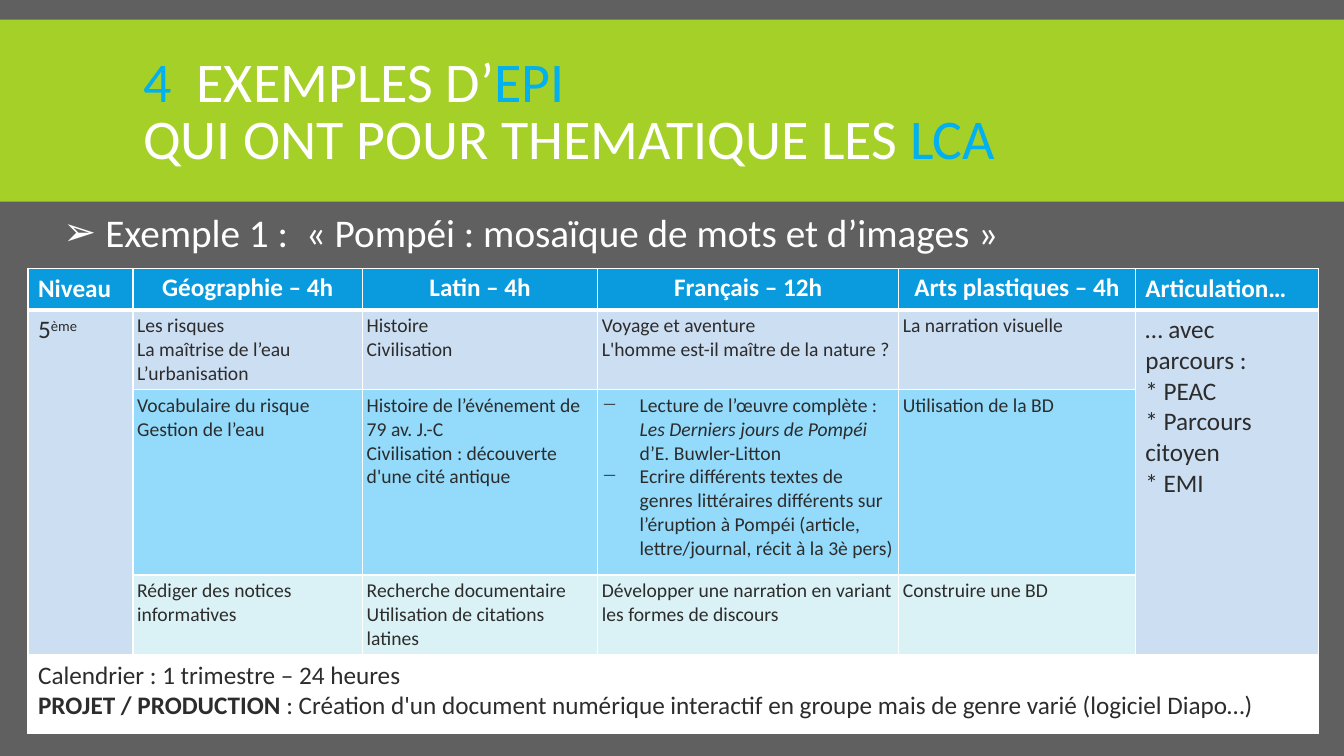
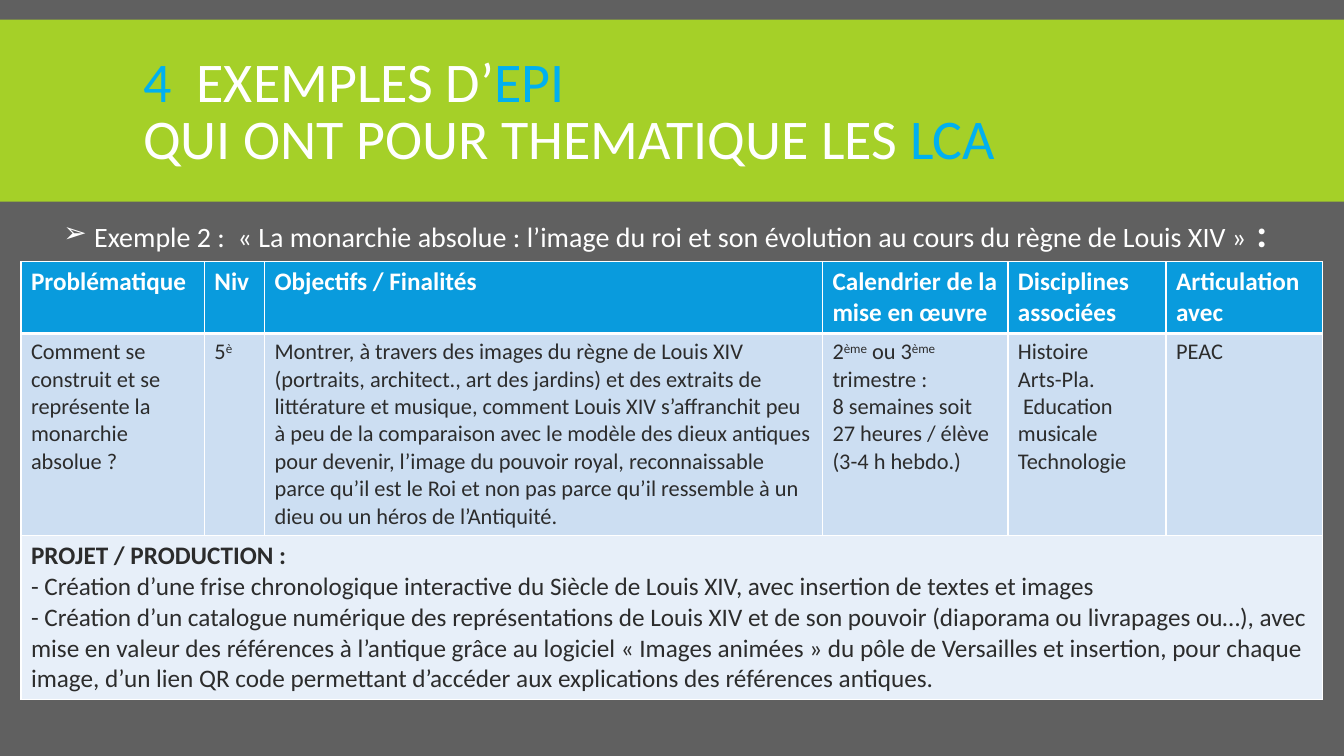
from dataclasses import dataclass
from itertools import product

from lxml import etree
from pptx import Presentation
from pptx.dml.color import RGBColor
from pptx.enum.shapes import MSO_SHAPE
from pptx.enum.text import MSO_ANCHOR, MSO_AUTO_SIZE, PP_ALIGN
from pptx.oxml.ns import qn
from pptx.util import Pt

RECTANGLE = MSO_SHAPE.RECTANGLE
LEFT, CENTER = PP_ALIGN.LEFT, PP_ALIGN.CENTER
MIDDLE = MSO_ANCHOR.MIDDLE
NO_AUTOFIT = MSO_AUTO_SIZE.NONE

GREY = RGBColor(0x60, 0x60, 0x60)
GREEN = RGBColor(0xA5, 0xD0, 0x28)
ACCENT = RGBColor(0x00, 0xB0, 0xF0)
WHITE = RGBColor(0xFF, 0xFF, 0xFF)
INK = RGBColor(0x2C, 0x2C, 0x2C)
HEADER_BLUE = RGBColor(0x09, 0x9B, 0xDD)
PALE_BLUE = RGBColor(0xCC, 0xDE, 0xF2)
SKY_BLUE = RGBColor(0x93, 0xDA, 0xFB)
PALE_AQUA = RGBColor(0xDA, 0xF2, 0xF5)
ICE_BLUE = RGBColor(0xE7, 0xEF, 0xF9)

FONT = "Calibri"
SLIDE_WIDTH, SLIDE_HEIGHT = 960, 540
LAYOUT_TITLE_AND_CONTENT = 1
BAND_ID = 20


@dataclass(frozen=True)
class Run:
    text: str
    bold: bool | None = None
    italic: bool | None = None
    superscript: bool = False
    color: RGBColor | None = None
    size: float | None = None


Line = tuple[str | Run, ...]


@dataclass(frozen=True)
class Cell:
    lines: tuple[Line, ...]
    fill: RGBColor
    size: float
    color: RGBColor = INK
    bold: bool = False
    align: PP_ALIGN = LEFT
    inset: float | None = None
    bullet: str | None = None
    row_span: int = 1
    col_span: int = 1


@dataclass(frozen=True)
class Grid:
    left: float
    top: float
    columns: tuple[float, ...]
    rows: tuple[float, ...]
    cells: tuple[tuple[Cell | None, ...], ...]


@dataclass(frozen=True)
class Example:
    heading: Line
    heading_size: float
    heading_indent: float
    grid: Grid


def as_lines(text: str) -> tuple[Line, ...]:
    return tuple((line,) for line in text.split("\n"))


def header(text: str) -> Cell:
    return Cell(as_lines(text), HEADER_BLUE, 18, WHITE, bold=True)


def subject_header(text: str) -> Cell:
    return Cell(as_lines(text), HEADER_BLUE, 18, WHITE, bold=True, align=CENTER, inset=3)


def subject_row(fill: RGBColor, *texts: str) -> tuple[Cell, ...]:
    return tuple(Cell(as_lines(text), fill, 14, inset=3) for text in texts)


def detail(text: str) -> Cell:
    return Cell(as_lines(text), PALE_BLUE, 16)


def sup(text: str) -> Run:
    return Run(text, superscript=True)


TITLE_LINES: tuple[Line, ...] = (
    (Run("4", color=ACCENT), "  EXEMPLES D’", Run("EPI", color=ACCENT)),
    ("QUI ONT POUR THEMATIQUE LES ", Run("LCA", color=ACCENT)),
)

READING_AND_WRITING = Cell(
    (
        ("Lecture de l’œuvre complète\u00a0: ",
         Run("Les Derniers jours de Pompéi ", italic=True),
         "d’E. Buwler-Litton"),
        ("Ecrire différents textes de genres littéraires différents sur l’éruption "
         "à Pompéi (article, lettre/journal, récit à la 3è pers)",),
    ),
    SKY_BLUE, 14, inset=3, bullet="−",
)

vocabulary, history, comics = subject_row(
    SKY_BLUE,
    "Vocabulaire du risque\nGestion de l’eau",
    "Histoire de l’événement de 79 av. J.-C\n"
    "Civilisation\u00a0: découverte d'une cité antique",
    "Utilisation de la BD",
)

POMPEII = Example(
    ("Exemple 1 :  « Pompéi : mosaïque de mots et d’images\u00a0»",), 28, 30,
    Grid(
        20, 192, (75, 164, 168, 215, 169, 131), (29, 56, 132.5, 56.5, 56),
        (
            (header("Niveau"),
             *map(subject_header, ("Géographie – 4h", "Latin – 4h", "Français – 12h",
                                   "Arts plastiques – 4h")),
             header("Articulation…")),
            (Cell((("5", sup("ème")),), PALE_BLUE, 18, row_span=3),
             *subject_row(
                 PALE_BLUE,
                 "Les risques\nLa maîtrise de l’eau\nL’urbanisation",
                 "Histoire\nCivilisation",
                 "Voyage et aventure\nL'homme est-il maître de la nature\u00a0?",
                 "La narration visuelle"),
             Cell(as_lines("… avec parcours :\n* PEAC\n* Parcours citoyen\n* EMI"),
                  PALE_BLUE, 18, row_span=3)),
            (None, vocabulary, history, READING_AND_WRITING, comics, None),
            (None,
             *subject_row(
                 PALE_AQUA,
                 "Rédiger des notices informatives",
                 "Recherche documentaire\nUtilisation de citations latines",
                 "Développer une narration en variant les formes de discours",
                 "Construire une BD"),
             None),
            (Cell((
                ("Calendrier : 1 trimestre – 24 heures",),
                (Run("PROJET / PRODUCTION ", bold=True),
                 ": Création d'un document numérique interactif en groupe mais de "
                 "genre varié (logiciel Diapo…)"),
            ), WHITE, 18, col_span=6),),
        ),
    ),
)

MONARCHY = Example(
    ("Exemple 2 :  «\u00a0La monarchie absolue : l’image du roi et son évolution au "
     "cours du règne de Louis XIV\u00a0»", Run(" :", bold=True, size=28)), 20, 22,
    Grid(
        15, 187, (131, 43, 398.5, 132.5, 113, 112), (51, 144.5, 116.5),
        (
            tuple(map(header, ("Problématique", "Niv", "Objectifs / Finalités",
                               "Calendrier de la mise en œuvre",
                               "Disciplines associées", "Articulation avec"))),
            (detail("Comment se construit et se représente la monarchie absolue ?"),
             Cell((("5", sup("è")),), PALE_BLUE, 16),
             detail("Montrer, à travers des images du règne de Louis XIV (portraits, "
                    "architect., art des jardins) et des extraits de littérature et "
                    "musique, comment Louis XIV s’affranchit peu à peu de la comparaison "
                    "avec le modèle des dieux antiques pour devenir, l’image du pouvoir "
                    "royal, reconnaissable parce qu’il est le Roi et non pas parce qu’il "
                    "ressemble à un dieu ou un héros de l’Antiquité."),
             Cell((
                 ("2", sup("ème"), " ou 3", sup("ème"), " trimestre :"),
                 ("8 semaines soit 27 heures / élève (3-4 h hebdo.)",),
             ), PALE_BLUE, 16),
             detail("Histoire\nArts-Pla.\n Education musicale\nTechnologie"),
             detail("PEAC")),
            (Cell((
                (Run("PROJET / PRODUCTION :", bold=True),),
                ("- Création d’une frise chronologique interactive du Siècle de "
                 "Louis XIV, avec insertion de textes et images",),
                ("- Création d’un catalogue numérique des représentations de Louis XIV "
                 "et de son pouvoir (diaporama ou livrapages ou…), avec mise en valeur "
                 "des références à l’antique grâce au logiciel « Images animées » du "
                 "pôle de Versailles et insertion, pour chaque image, d’un lien QR code "
                 "permettant d’accéder aux explications des références antiques.",),
            ), ICE_BLUE, 18, col_span=6),),
        ),
    ),
)


def set_font(font, size: float, color: RGBColor, bold: bool = False) -> None:
    font.name, font.size, font.bold = FONT, Pt(size), bold
    font.color.rgb = color


def add_runs(paragraph, line: Line) -> None:
    for part in line:
        part = Run(part) if isinstance(part, str) else part
        run = paragraph.add_run()
        run.text = part.text
        if part.bold is not None:
            run.font.bold = part.bold
        if part.italic is not None:
            run.font.italic = part.italic
        if part.size is not None:
            run.font.size = Pt(part.size)
        if part.color is not None:
            run.font.color.rgb = part.color
        if part.superscript:
            run._r.get_or_add_rPr().set("baseline", "30000")


def set_bullet(paragraph, symbol: str, indent: float, color: RGBColor) -> None:
    properties = paragraph._p.get_or_add_pPr()
    properties.set("marL", str(Pt(indent)))
    properties.set("indent", str(-Pt(indent)))
    bullet = etree.Element(qn("a:buChar"), char=symbol)
    bullet_color = etree.Element(qn("a:buClr"))
    etree.SubElement(bullet_color, qn("a:srgbClr"), val=str(color))
    default_font = properties.find(qn("a:defRPr"))
    for element in (bullet_color, bullet):
        if default_font is None:
            properties.append(element)
        else:
            default_font.addprevious(element)


def set_borders(cell, top: float, bottom: float) -> None:
    """Draw white edges; line elements must come before the cell fill."""
    properties = cell._tc.get_or_add_tcPr()
    edges = (("a:lnL", 1), ("a:lnR", 1), ("a:lnT", top), ("a:lnB", bottom))
    for position, (tag, width) in enumerate(edges):
        edge = etree.Element(qn(tag), w=str(Pt(width)))
        fill = etree.SubElement(edge, qn("a:solidFill"))
        etree.SubElement(fill, qn("a:srgbClr"), val=str(WHITE))
        properties.insert(position, edge)


def fill_cell(cell, content: Cell) -> None:
    if content.inset is not None:
        cell.margin_left = cell.margin_right = Pt(content.inset)
        cell.margin_top = cell.margin_bottom = Pt(content.inset)
    frame = cell.text_frame
    for index, line in enumerate(content.lines):
        paragraph = frame.add_paragraph() if index else frame.paragraphs[0]
        paragraph.alignment = content.align
        set_font(paragraph.font, content.size, content.color, content.bold)
        add_runs(paragraph, line)
        if content.bullet:
            set_bullet(paragraph, content.bullet, 27, content.color)


def add_grid(slide, grid: Grid) -> None:
    table = slide.shapes.add_table(
        len(grid.rows), len(grid.columns), Pt(grid.left), Pt(grid.top),
        Pt(sum(grid.columns)), Pt(sum(grid.rows))).table
    for column, width in zip(table.columns, grid.columns):
        column.width = Pt(width)
    for row, height in zip(table.rows, grid.rows):
        row.height = Pt(height)
    for r, row_cells in enumerate(grid.cells):
        for c, content in enumerate(row_cells):
            if content is None:
                continue
            last_row, last_column = r + content.row_span, c + content.col_span
            if content.row_span * content.col_span > 1:
                table.cell(r, c).merge(table.cell(last_row - 1, last_column - 1))
            for covered in product(range(r, last_row), range(c, last_column)):
                cell = table.cell(*covered)
                cell.fill.solid()
                cell.fill.fore_color.rgb = content.fill
                set_borders(cell, 3 if r == 1 else 1, 3 if r == 0 else 1)
            fill_cell(table.cell(r, c), content)


def place(shape, left: float, top: float, width: float, height: float) -> None:
    shape.left, shape.top = Pt(left), Pt(top)
    shape.width, shape.height = Pt(width), Pt(height)
    shape.text_frame.auto_size = NO_AUTOFIT


def add_title(slide) -> None:
    title = slide.shapes.title
    place(title, 95, 22, 770, 119)
    title.text_frame.vertical_anchor = MIDDLE
    paragraph = title.text_frame.paragraphs[0]
    paragraph.alignment, paragraph.line_spacing = LEFT, 0.85
    set_font(paragraph.font, 40, WHITE)
    for index, line in enumerate(TITLE_LINES):
        if index:
            paragraph.add_line_break()
        add_runs(paragraph, line)


def add_heading(slide, example: Example) -> None:
    body = slide.placeholders[1]
    place(body, 38, 149, 878, 331)
    paragraph = body.text_frame.paragraphs[0]
    paragraph.line_spacing = 0.9
    paragraph.space_before, paragraph.space_after = Pt(12), Pt(2)
    set_font(paragraph.font, example.heading_size, WHITE)
    add_runs(paragraph, example.heading)
    set_bullet(paragraph, "➢", example.heading_indent, WHITE)


def move_band_to_master(slide, master) -> None:
    """Masters cannot create shapes, so the band is made on a slide and moved."""
    band = slide.shapes.add_shape(RECTANGLE, 0, Pt(14), Pt(SLIDE_WIDTH), Pt(130))
    band.shadow.inherit = False
    band.fill.solid()
    band.fill.fore_color.rgb = GREEN
    band.line.fill.background()
    band.element.nvSpPr.cNvPr.set("id", str(BAND_ID))
    master.shapes.element.insert(2, band.element)


def main() -> None:
    deck = Presentation()
    deck.slide_width, deck.slide_height = Pt(SLIDE_WIDTH), Pt(SLIDE_HEIGHT)
    master = deck.slide_master
    master.background.fill.solid()
    master.background.fill.fore_color.rgb = GREY
    for index, example in enumerate((POMPEII, MONARCHY)):
        slide = deck.slides.add_slide(deck.slide_layouts[LAYOUT_TITLE_AND_CONTENT])
        if index == 0:
            move_band_to_master(slide, master)
        add_title(slide)
        add_heading(slide, example)
        add_grid(slide, example.grid)
    deck.save("out.pptx")


if __name__ == "__main__":
    main()
